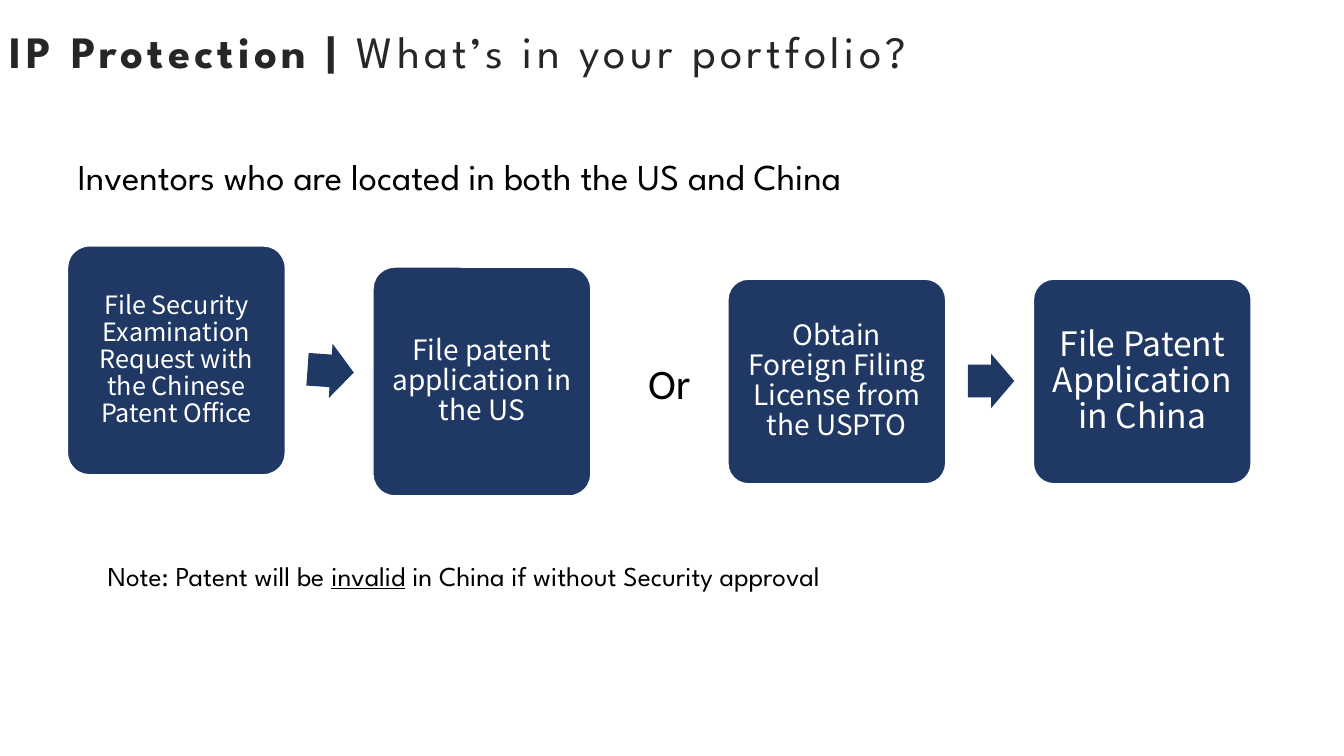
import pptx
import pptx.util
import pptx.dml.color
import pptx.enum.shapes
import pptx.enum.text

Pt = pptx.util.Pt
RGB = pptx.dml.color.RGBColor
SHAPE = pptx.enum.shapes.MSO_SHAPE
ANCHOR = pptx.enum.text.MSO_ANCHOR
ALIGN = pptx.enum.text.PP_ALIGN

NAVY = RGB(0x20, 0x38, 0x64)
WHITE = RGB(0xFF, 0xFF, 0xFF)
BLACK = RGB(0, 0, 0)
CHARCOAL = RGB(0x26, 0x26, 0x26)
HEADING_FONT = "League Spartan"
STEP_FONT = "Noto Sans CJK SC"
OR_FONT = "Calibri"

STEP_WIDTH = 216
STEP_PITCH = 303
ARROW_GAP = 22
ARROW_WIDTH, ARROW_HEIGHT = 46, 54


def px(length):
    return pptx.util.Emu(length * 9144)


def set_font(paragraph, name, size, color):
    paragraph.font.name = name
    paragraph.font.size = Pt(size)
    paragraph.font.color.rgb = color


def add_line(slide, box, parts, name, size, color):
    frame = slide.shapes.add_textbox(*map(px, box)).text_frame
    frame.word_wrap = True
    line = frame.paragraphs[0]
    set_font(line, name, size, color)
    for part in parts:
        line.add_run().text = part
    return line.runs


def add_header(slide, box):
    topic, question = add_line(
        slide, box, ["IP Protection | ", "What’s in your portfolio?"],
        HEADING_FONT, 32, CHARCOAL)
    topic.font.bold = True
    for run in (topic, question):
        run.font._element.set("spc", "300")


def add_subject(slide, box):
    subject = slide.shapes.title
    subject.left, subject.top, subject.width, subject.height = map(px, box)
    frame = subject.text_frame
    frame.text = "Inventors who are located in both the US and China"
    frame.vertical_anchor = ANCHOR.MIDDLE
    frame.auto_size = pptx.enum.text.MSO_AUTO_SIZE.NONE
    line = frame.paragraphs[0]
    line.alignment = ALIGN.LEFT
    set_font(line, HEADING_FONT, 26, BLACK)


def add_solid(slide, kind, box, adjustments):
    solid = slide.shapes.add_shape(kind, *map(px, box))
    solid.shadow.inherit = False
    solid.fill.solid()
    solid.fill.fore_color.rgb = NAVY
    for index, value in enumerate(adjustments):
        solid.adjustments[index] = value
    return solid


def add_step(slide, box, text, size, inset):
    step = add_solid(slide, SHAPE.ROUNDED_RECTANGLE, box, [0.1])
    step.line.color.rgb = WHITE
    step.line.width = Pt(1)
    frame = step.text_frame
    frame.word_wrap = True
    frame.vertical_anchor = ANCHOR.MIDDLE
    frame.margin_left = frame.margin_right = px(inset)
    frame.margin_top = frame.margin_bottom = px(inset)
    frame.text = text
    line = frame.paragraphs[0]
    line.alignment = ALIGN.CENTER
    line.line_spacing = 0.9
    set_font(line, STEP_FONT, size, WHITE)


def add_route(slide, box, steps, drop=0, tilt=0):
    left, top, height = box
    for index, (text, size, inset) in enumerate(steps):
        step_box = (left + index * STEP_PITCH, top + index * drop,
                    STEP_WIDTH, height)
        add_step(slide, step_box, text, size, inset)
    arrow_box = (left + STEP_WIDTH + ARROW_GAP,
                 top + (height + drop - ARROW_HEIGHT) // 2,
                 ARROW_WIDTH, ARROW_HEIGHT)
    arrow = add_solid(slide, SHAPE.RIGHT_ARROW, arrow_box, [0.6, 0.5])
    arrow.line.fill.background()
    arrow.rotation = tilt


def add_note(slide, box):
    runs = add_line(
        slide, box,
        ["Note: Patent will be ", "invalid",
         " in China if without Security approval"],
        HEADING_FONT, 19.5, BLACK)
    runs[1].font.underline = True


def main():
    deck = pptx.Presentation()
    deck.slide_width, deck.slide_height = px(1333), px(750)
    slide = deck.slides.add_slide(deck.slide_layouts[5])
    add_header(slide, (0, 19, 1313, 64))
    add_subject(slide, (67, 133, 1079, 83))
    add_route(slide, (67, 244, 227), [
        ("File Security Examination Request with the Chinese Patent Office",
         18, 7),
        ("File patent application in the US", 20, 8),
    ], drop=21, tilt=4)
    add_line(slide, (633, 350, 67, 91), ["Or"], OR_FONT, 30, BLACK)
    add_route(slide, (722, 277, 203), [
        ("Obtain Foreign Filing License from the USPTO", 20, 8),
        ("File Patent Application in China", 24, 10),
    ])
    add_note(slide, (97, 550, 977, 73))
    deck.save("out.pptx")


if __name__ == "__main__":
    main()
